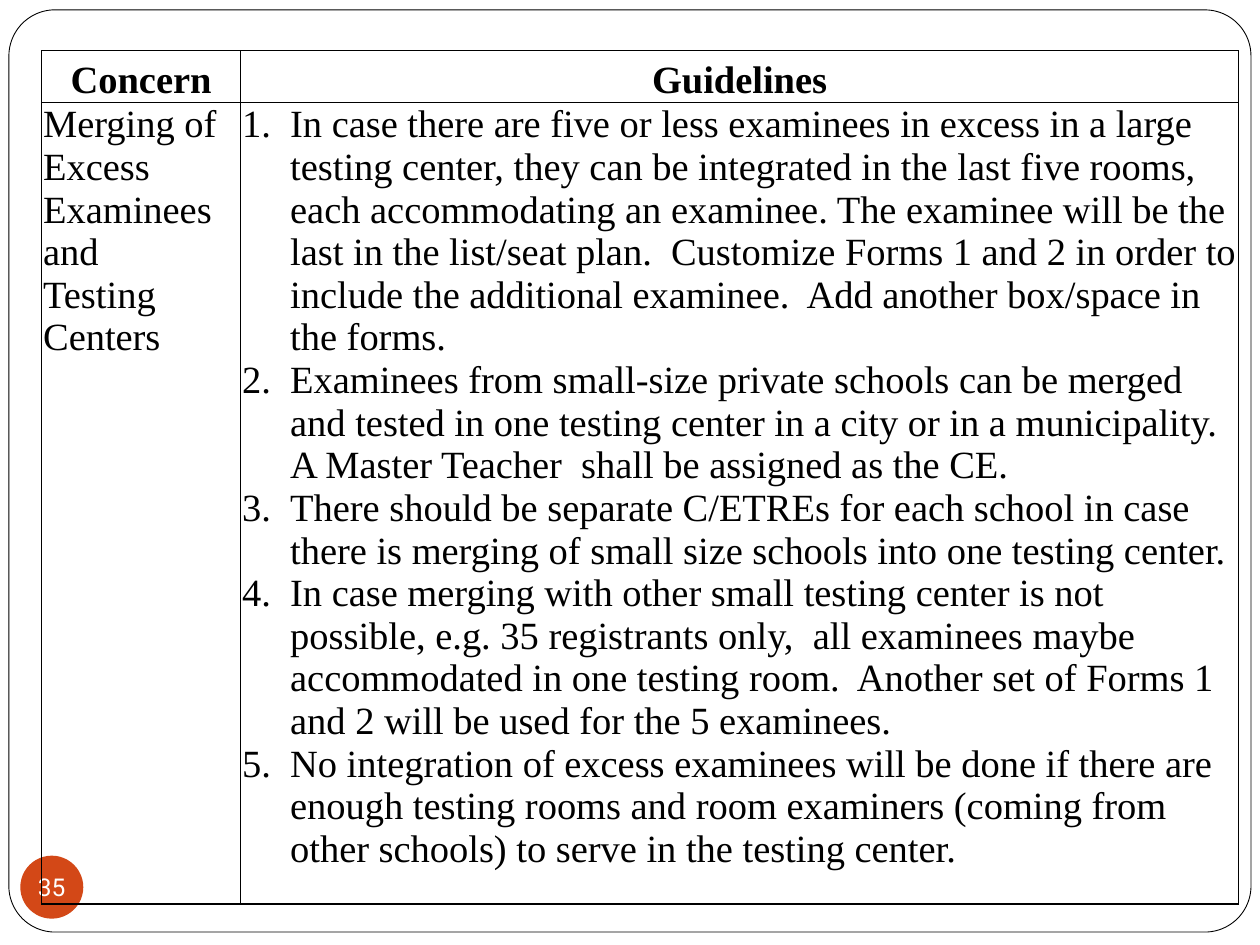
from dataclasses import dataclass

from lxml import etree
from pptx import Presentation
from pptx.dml.color import RGBColor
from pptx.enum.shapes import MSO_SHAPE
from pptx.enum.text import MSO_ANCHOR, PP_ALIGN
from pptx.oxml.ns import qn
from pptx.util import Cm, Pt

ROUND, OVAL = MSO_SHAPE.ROUNDED_RECTANGLE, MSO_SHAPE.OVAL
TOP, MIDDLE, BOTTOM = MSO_ANCHOR.TOP, MSO_ANCHOR.MIDDLE, MSO_ANCHOR.BOTTOM
LEFT, CENTER = PP_ALIGN.LEFT, PP_ALIGN.CENTER


@dataclass(frozen=True)
class Theme:
    ink: str = "000000"
    paper: str = "FFFFFF"
    accent: str = "D34817"
    serif: str = "Times New Roman"
    sans: str = "Roboto"
    body: float = 22
    badge: float = 14
    thin: float = 0.5
    thick: float = 1


THEME = Theme()


@dataclass(frozen=True)
class Panel:
    kind: int
    box: tuple[float, float, float, float]
    fill: str
    line: str | None = None


@dataclass(frozen=True)
class Entry:
    row: int
    col: int
    lines: tuple[str, ...]
    edges: tuple[float, float, float, float]  # left, right, top, bottom
    head: bool = False
    listed: bool = False


FRAME = Panel(ROUND, (0.18, 0.2, 25.04, 18.59), THEME.paper, THEME.ink)
BADGE = Panel(OVAL, (0.41, 17.25, 1.27, 1.27), THEME.accent)
GRID = (0.84, 1.02, 24.13, 17.2)
COLS = (4.01, 20.12)
ROWS = (1.04, 16.16)
INDENT = 0.97

FINE = (THEME.thin,) * 4
ENTRIES = (
    Entry(0, 0, ("Concern",), FINE, head=True),
    Entry(0, 1, ("Guidelines",), FINE, head=True),
    Entry(1, 0, ("Merging of Excess Examinees and", "Testing Centers"),
          (THEME.thin, THEME.thick, THEME.thin, THEME.thick)),
    Entry(1, 1, (
        "In case there are five or less examinees in excess in a large testing "
        "center, they can be integrated in the last five rooms, each "
        "accommodating an examinee. The examinee will be the last in the "
        "list/seat plan.  Customize Forms 1 and 2 in order to include the "
        "additional examinee.  Add another box/space in the forms.",
        "Examinees from small-size private schools can be merged and tested in "
        "one testing center in a city or in a municipality. A Master Teacher  "
        "shall be assigned as the CE.",
        "There should be separate C/ETREs for each school in case there is "
        "merging of small size schools into one testing center.",
        "In case merging with other small testing center is not possible, e.g. "
        "35 registrants only,  all examinees maybe accommodated in one testing "
        "room.  Another set of Forms 1 and 2 will be used for the 5 examinees.",
        "No integration of excess examinees will be done if there are enough "
        "testing rooms and room examiners (coming from other schools) to serve "
        "in the testing center.",
    ), (THEME.thick, THEME.thick, THEME.thin, THEME.thick), listed=True),
)


def write(frame, lines: tuple[str, ...], *, font: str = THEME.serif,
          size: float = THEME.body, color: str = THEME.ink, bold: bool = False,
          align: int = LEFT, listed: bool = False) -> None:
    for i, text in enumerate(lines):
        para = frame.add_paragraph() if i else frame.paragraphs[0]
        para.alignment = align
        if listed:
            number(para)
        run = para.add_run()
        run.text = text
        run.font.name, run.font.size, run.font.bold = font, Pt(size), bold
        run.font.color.rgb = RGBColor.from_string(color)


def number(para) -> None:
    """Give a paragraph automatic numbering with a hanging indent."""
    props = para._p.get_or_add_pPr()
    props.set("marL", str(Cm(INDENT)))
    props.set("indent", str(-Cm(INDENT)))
    etree.SubElement(props, qn("a:buFont"), typeface="+mj-lt")
    etree.SubElement(props, qn("a:buAutoNum"), type="arabicPeriod")


def border(cell, edges: tuple[float, ...]) -> None:
    props = cell._tc.get_or_add_tcPr()
    for side, width in zip("LRTB", edges):
        line = etree.SubElement(props, qn(f"a:ln{side}"), w=str(Pt(width)))
        fill = etree.SubElement(line, qn("a:solidFill"))
        etree.SubElement(fill, qn("a:srgbClr"), val=THEME.ink)


def draw_panel(slide, panel: Panel):
    shape = slide.shapes.add_shape(panel.kind, *map(Cm, panel.box))
    shape.shadow.inherit = False
    shape.fill.solid()
    shape.fill.fore_color.rgb = RGBColor.from_string(panel.fill)
    if panel.line:
        shape.line.color.rgb = RGBColor.from_string(panel.line)
        shape.line.width = Pt(THEME.thin)
    else:
        shape.line.fill.background()
    return shape


def draw_badge(slide, text: str) -> None:
    frame = draw_panel(slide, BADGE).text_frame
    frame.margin_left = frame.margin_right = 0
    frame.margin_top = frame.margin_bottom = 0
    frame.word_wrap = False
    frame.vertical_anchor = MIDDLE
    write(frame, (text,), font=THEME.sans, size=THEME.badge,
          color=THEME.paper, align=CENTER)


def draw_entry(table, entry: Entry) -> None:
    cell = table.cell(entry.row, entry.col)
    cell.margin_left = cell.margin_right = cell.margin_top = Cm(0.03)
    cell.margin_bottom = 0
    cell.vertical_anchor = BOTTOM if entry.head else TOP
    border(cell, entry.edges)
    cell.fill.background()
    write(cell.text_frame, entry.lines, bold=entry.head,
          align=CENTER if entry.head else LEFT, listed=entry.listed)


def draw_table(slide) -> None:
    table = slide.shapes.add_table(len(ROWS), len(COLS), *map(Cm, GRID)).table
    table.first_row = table.horz_banding = False
    for col, width in zip(table.columns, COLS):
        col.width = Cm(width)
    for row, height in zip(table.rows, ROWS):
        row.height = Cm(height)
    for entry in ENTRIES:
        draw_entry(table, entry)


def main() -> None:
    deck = Presentation()
    deck.slide_width, deck.slide_height = Cm(25.4), Cm(19.05)
    slide = deck.slides.add_slide(deck.slide_layouts[6])
    draw_panel(slide, FRAME).adjustments[0] = 0.05
    draw_badge(slide, "35")
    draw_table(slide)
    deck.save("out.pptx")


if __name__ == "__main__":
    main()
